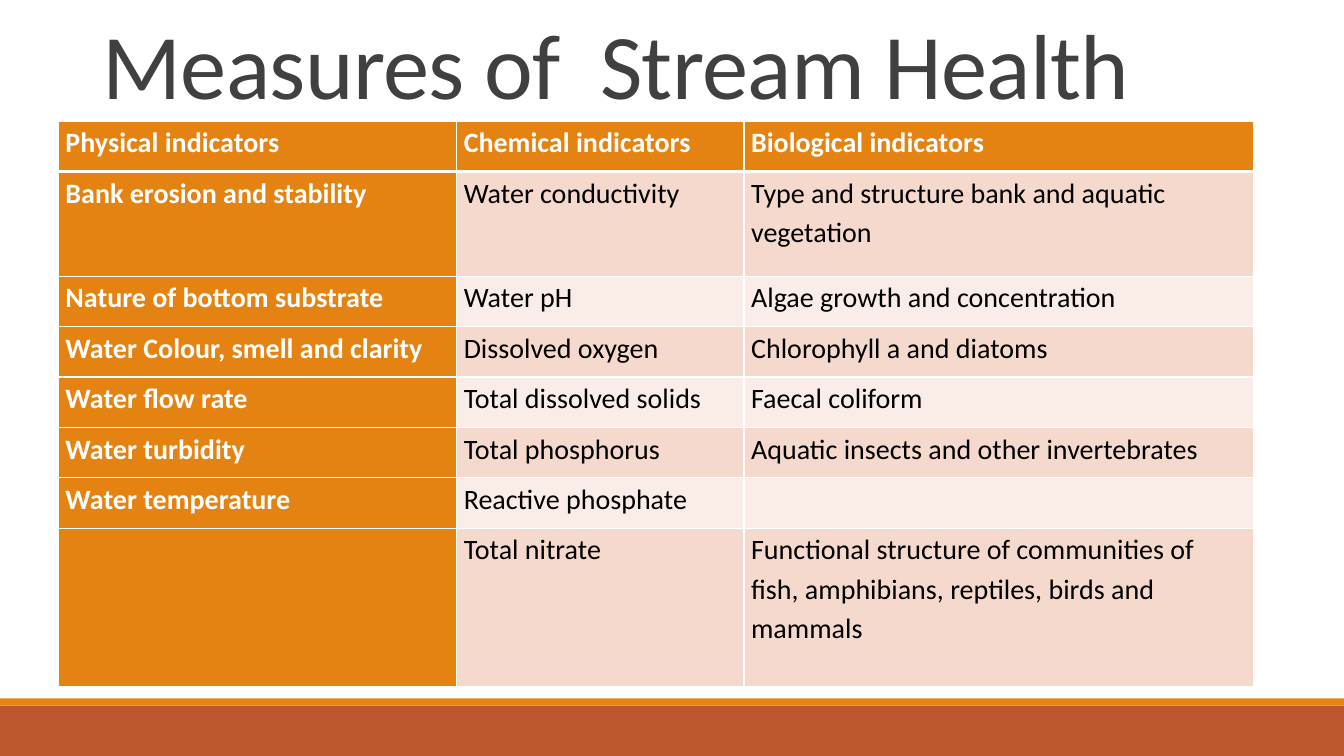
import pptx
import pptx.dml.color
import pptx.enum.shapes
import pptx.enum.text
import pptx.oxml
import pptx.oxml.ns
import pptx.util

Inches = pptx.util.Inches
Pt = pptx.util.Pt
RGBColor = pptx.dml.color.RGBColor

TITLE = "Measures of  Stream Health"
ROWS = [
    ("Physical indicators", "Chemical indicators", "Biological indicators"),
    ("Bank erosion and stability", "Water conductivity",
     "Type and structure bank and aquatic  vegetation"),
    ("Nature of bottom substrate", "Water pH", "Algae growth and concentration"),
    ("Water Colour, smell and clarity", "Dissolved oxygen", "Chlorophyll a and diatoms"),
    ("Water flow rate", "Total dissolved solids", "Faecal coliform"),
    ("Water turbidity", "Total phosphorus", "Aquatic insects and other invertebrates"),
    ("Water temperature", "Reactive phosphate", ""),
    ("", "Total nitrate",
     "Functional structure of communities of fish, amphibians, reptiles, birds and mammals"),
]
COL_WIDTHS = [3.95, 2.85, 5.05]
ROW_HEIGHTS = [0.5, 1.04, 0.5, 0.5, 0.5, 0.5, 0.5, 1.57]

FONT = "Calibri"
WHITE = RGBColor(0xFF, 0xFF, 0xFF)
BLACK = RGBColor(0, 0, 0)
GREY = RGBColor(0x40, 0x40, 0x40)
ORANGE = RGBColor(0xE4, 0x83, 0x12)
RUST = RGBColor(0xBD, 0x58, 0x2C)
BANDS = [RGBColor(0xFA, 0xED, 0xE7), RGBColor(0xF5, 0xD9, 0xCC)]
FOOTER_BARS = [(7, 0.5, RUST), (6.93, 0.07, ORANGE)]


def set_font(p, size, color, bold):
    p.font.name = FONT
    p.font.size = Pt(size)
    p.font.color.rgb = color
    p.font.bold = bold


def add_border(cell, side, width):
    cell._tc.get_or_add_tcPr().append(pptx.oxml.parse_xml(
        f'<a:{side} {pptx.oxml.ns.nsdecls("a")} w="{Pt(width)}">'
        f'<a:solidFill><a:srgbClr val="{WHITE}"/></a:solidFill></a:{side}>'))


def add_footer(slide):
    for top, height, color in FOOTER_BARS:
        sp = slide.shapes.add_shape(pptx.enum.shapes.MSO_SHAPE.RECTANGLE,
                                    0, Inches(top), prs.slide_width, Inches(height))
        sp.shadow.inherit = False
        sp.fill.solid()
        sp.fill.fore_color.rgb = color
        sp.line.fill.background()


def add_title(slide):
    sp = slide.shapes.add_textbox(Inches(0.92), Inches(0.4), Inches(11.5), Inches(0.82))
    tf = sp.text_frame
    tf.word_wrap = True
    tf.vertical_anchor = pptx.enum.text.MSO_ANCHOR.BOTTOM
    p = tf.paragraphs[0]
    p.line_spacing = 0.85
    r = p.add_run()
    r.text = TITLE
    set_font(p, 66, GREY, False)
    r._r.get_or_add_rPr().set("spc", "-50")


def fill_cell(cell, text, row, col):
    heading = row == 0 or col == 0
    cell.margin_left = cell.margin_right = Inches(0.07)
    cell.margin_top = cell.margin_bottom = 0
    for side in ("lnL", "lnR", "lnT", "lnB"):
        under_header = (row, side) in ((0, "lnB"), (1, "lnT"))
        add_border(cell, side, 3 if under_header else 1)
    cell.fill.solid()
    cell.fill.fore_color.rgb = ORANGE if heading else BANDS[row % 2]
    p = cell.text_frame.paragraphs[0]
    p.line_spacing = 1.15
    if text:
        p.add_run().text = text
    set_font(p, 20, WHITE if heading else BLACK, heading)


def add_indicators(slide):
    table = slide.shapes.add_table(len(ROWS), len(COL_WIDTHS), Inches(0.58), Inches(1.2),
                                   Inches(sum(COL_WIDTHS)), Inches(sum(ROW_HEIGHTS))).table
    for column, width in zip(table.columns, COL_WIDTHS):
        column.width = Inches(width)
    for row, height in enumerate(ROW_HEIGHTS):
        table.rows[row].height = Inches(height)
        for col, text in enumerate(ROWS[row]):
            fill_cell(table.cell(row, col), text, row, col)


prs = pptx.Presentation()
prs.slide_width = Inches(13.33)
prs.slide_height = Inches(7.5)
slide = prs.slides.add_slide(prs.slide_layouts[6])
add_footer(slide)
add_title(slide)
add_indicators(slide)
prs.save("out.pptx")
